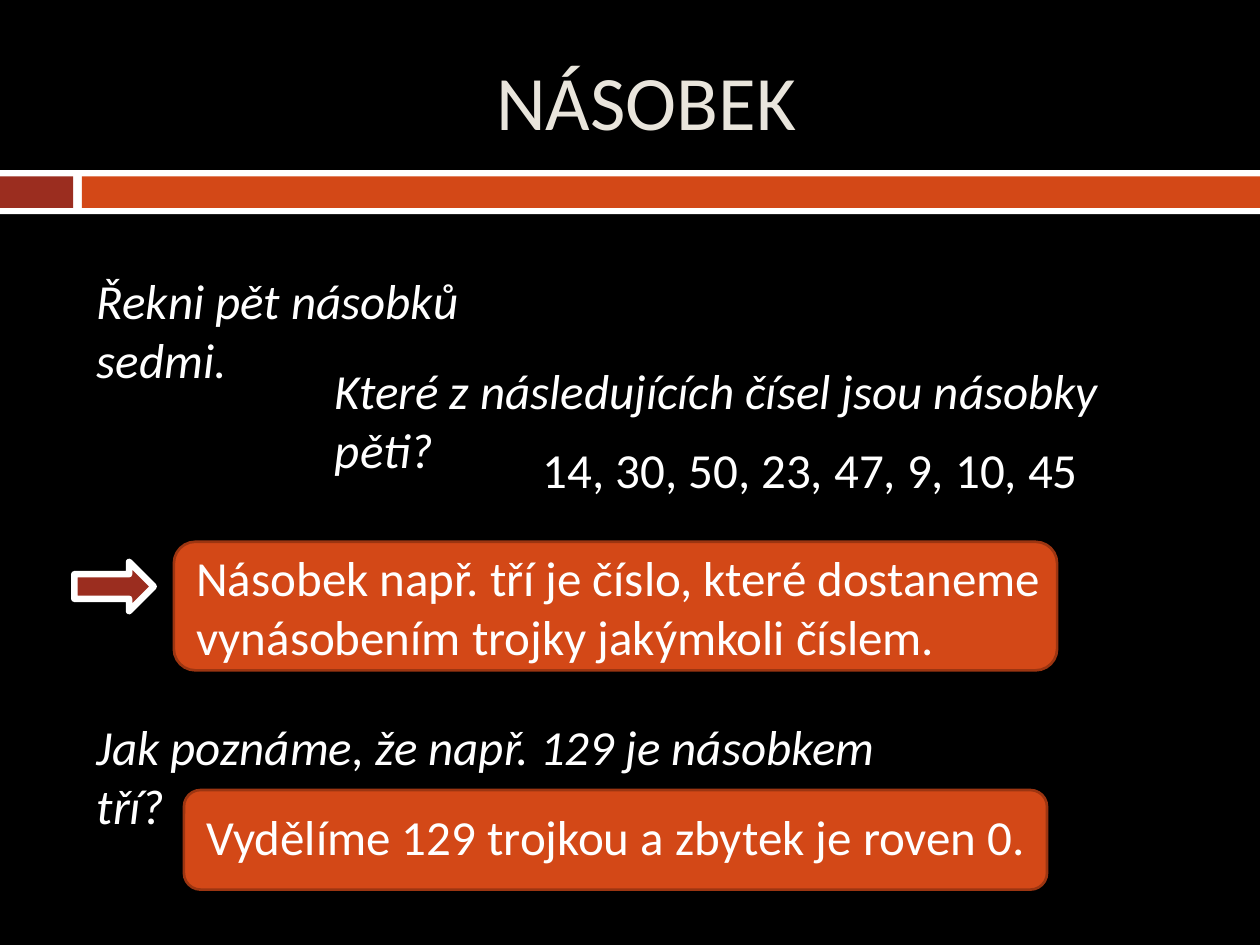
from dataclasses import dataclass

from pptx import Presentation
from pptx.dml.color import RGBColor
from pptx.enum.shapes import MSO_SHAPE
from pptx.enum.text import MSO_ANCHOR, PP_ALIGN
from pptx.util import Inches, Pt

RECTANGLE = MSO_SHAPE.RECTANGLE
ROUNDED = MSO_SHAPE.ROUNDED_RECTANGLE
RIGHT_ARROW = MSO_SHAPE.RIGHT_ARROW
TOP, MIDDLE = MSO_ANCHOR.TOP, MSO_ANCHOR.MIDDLE
LEFT, CENTER = PP_ALIGN.LEFT, PP_ALIGN.CENTER


@dataclass(frozen=True)
class Theme:
    font: str = "Calibri"
    title_size: int = 44
    body_size: int = 28
    background: RGBColor = RGBColor.from_string("000000")
    white: RGBColor = RGBColor.from_string("FFFFFF")
    title: RGBColor = RGBColor.from_string("E9E5DC")
    orange: RGBColor = RGBColor.from_string("D34817")
    orange_edge: RGBColor = RGBColor.from_string("9C3511")
    red: RGBColor = RGBColor.from_string("9B2D1F")


THEME = Theme()
SLIDE_WIDTH, SLIDE_HEIGHT = 10, 7.5
TEXT_LEFT = 0.67
LINE_HEIGHT = 0.57


def add_block(slide, kind, box, fill, edge=None, edge_width=0):
    block = slide.shapes.add_shape(kind, *map(Inches, box))
    block.shadow.inherit = False
    block.fill.solid()
    block.fill.fore_color.rgb = fill
    if edge is None:
        block.line.fill.background()
    else:
        block.line.color.rgb = edge
        block.line.width = Pt(edge_width)


def add_text(slide, box, lines, size=THEME.body_size, color=THEME.white,
             italic=False, align=LEFT, anchor=TOP):
    frame = slide.shapes.add_textbox(*map(Inches, box)).text_frame
    frame.word_wrap = True
    frame.vertical_anchor = anchor
    frame.text = "\n".join(lines)
    font_format = {"name": THEME.font, "size": Pt(size), "italic": italic}
    for paragraph in frame.paragraphs:
        paragraph.alignment = align
        for run in paragraph.runs:
            for attribute, value in font_format.items():
                setattr(run.font, attribute, value)
            run.font.color.rgb = color


def add_header(slide):
    band_top, band_height = 1.4, 0.25
    margin, accent_width, bar_left = 0.05, 0.58, 0.65
    add_block(slide, RECTANGLE,
              (0, band_top - margin, SLIDE_WIDTH, band_height + 2 * margin),
              THEME.white)
    add_block(slide, RECTANGLE, (0, band_top, accent_width, band_height),
              THEME.red)
    add_block(slide, RECTANGLE,
              (bar_left, band_top, SLIDE_WIDTH - bar_left, band_height),
              THEME.orange)
    add_text(slide, (TEXT_LEFT, 0.25, 8.92, 1.08), ["NÁSOBEK"],
             THEME.title_size, THEME.title, align=CENTER, anchor=MIDDLE)


def add_questions(slide):
    questions = [
        (TEXT_LEFT, 2.1, 3.97, "Řekni pět násobků sedmi."),
        (2.56, 2.81, 6.87, "Které z následujících čísel jsou násobky pěti?"),
        (TEXT_LEFT, 5.64, 6.94, "Jak poznáme, že např. 129 je násobkem tří?"),
    ]
    for left, top, width, question in questions:
        add_text(slide, (left, top, width, LINE_HEIGHT), [question],
                 italic=True)
    add_text(slide, (4.21, 3.44, 4.93, LINE_HEIGHT),
             ["14, 30, 50, 23, 47, 9, 10, 45"])


def add_answers(slide):
    answers = [
        ((1.38, 4.3, 7.01, 1.02), (1.46, 4.3, 7.01, 1.04),
         ["Násobek např. tří je číslo, které dostaneme",
          "vynásobením trojky jakýmkoli číslem."]),
        ((1.46, 6.27, 6.85, 0.79), (1.54, 6.35, 6.92, LINE_HEIGHT),
         ["Vydělíme 129 trojkou a zbytek je roven 0."]),
    ]
    for panel, text_box, lines in answers:
        add_block(slide, ROUNDED, panel, THEME.orange, THEME.orange_edge, 1.5)
        add_text(slide, text_box, lines)
    add_block(slide, RIGHT_ARROW, (0.59, 4.46, 0.63, 0.39),
              THEME.red, THEME.white, 3.75)


def main():
    presentation = Presentation()
    presentation.slide_width = Inches(SLIDE_WIDTH)
    presentation.slide_height = Inches(SLIDE_HEIGHT)
    slide = presentation.slides.add_slide(presentation.slide_layouts[6])
    slide.background.fill.solid()
    slide.background.fill.fore_color.rgb = THEME.background
    add_header(slide)
    add_questions(slide)
    add_answers(slide)
    presentation.save("out.pptx")


if __name__ == "__main__":
    main()
